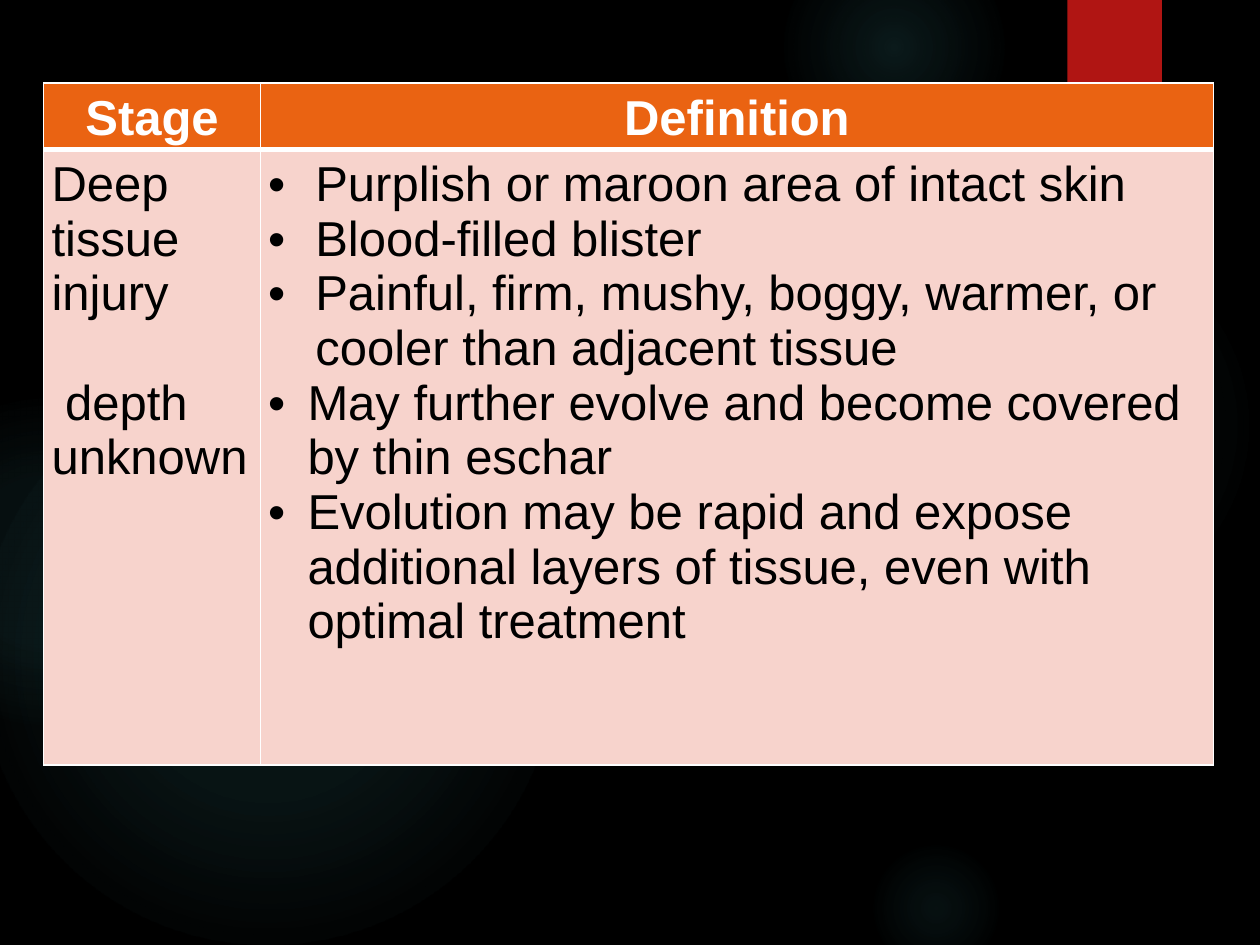
from dataclasses import dataclass

from lxml import etree
from pptx import Presentation
from pptx.dml.color import RGBColor
from pptx.enum.shapes import MSO_SHAPE
from pptx.enum.text import MSO_ANCHOR, PP_ALIGN
from pptx.oxml.ns import qn
from pptx.util import Pt

OVAL, RECT = MSO_SHAPE.OVAL, MSO_SHAPE.RECTANGLE
CENTER, LEFT = PP_ALIGN.CENTER, PP_ALIGN.LEFT
BOTTOM, TOP = MSO_ANCHOR.BOTTOM, MSO_ANCHOR.TOP


@dataclass(frozen=True)
class Theme:
    background: str = "000000"
    glow: str = "50B9C1"
    ribbon: str = "B01513"
    header: str = "EA6312"
    body: str = "F7D3CC"
    light: str = "FFFFFF"
    dark: str = "000000"
    font: str = "Arial"
    size: int = 28


THEME = Theme()

# left, top, diameter, then (position %, opacity %) stops
GLOWS = [
    (496, 132, 222, [(0, 7), (36, 6), (69, 0)]),
    (448, -36, 126, [(0, 14), (36, 7), (73, 0)]),
    (496, 480, 78, [(0, 9), (36, 5), (66, 0)]),
    (-12, 210, 330, [(0, 11), (36, 10), (75, 0)]),
    (-66, 228, 186, [(0, 8), (36, 8), (72, 0)]),
]
HEADINGS = ["Stage", "Definition"]
STAGE = ["Deep tissue injury", "depth unknown"]
# text, hanging indent
DEFINITION = [
    ("Purplish or maroon area of intact skin", 27),
    ("Blood-filled blister", 27),
    ("Painful, firm, mushy, boggy, warmer, or cooler than adjacent tissue", 27),
    ("May further evolve and become covered by thin eschar", 22.5),
    ("Evolution may be rapid and expose additional layers of tissue, "
     "even with optimal treatment", 22.5),
]


def rgb(color):
    return RGBColor.from_string(color)


def child(parent, tag, **attrs):
    el = etree.SubElement(parent, qn(tag))
    for name, value in attrs.items():
        el.set(name, str(value))
    return el


def add_color(parent, color, opacity=100):
    clr = child(parent, "a:srgbClr", val=color)
    if opacity < 100:
        child(clr, "a:alpha", val=opacity * 1000)


def add_plain_shape(slide, kind, box):
    sp = slide.shapes.add_shape(kind, *map(Pt, box))
    sp.shadow.inherit = False
    sp.line.fill.background()
    return sp


def add_glow(slide, box, stops):
    """Circle that fades from its centre to nothing."""
    sp = add_plain_shape(slide, OVAL, box)
    sp.fill.background()
    props = sp._element.spPr
    grad = etree.Element(qn("a:gradFill"))
    props.replace(props.find(qn("a:noFill")), grad)
    stop_list = child(grad, "a:gsLst")
    for position, opacity in stops:
        add_color(child(stop_list, "a:gs", pos=position * 1000), THEME.glow, opacity)
    path = child(grad, "a:path", path="circle")
    child(path, "a:fillToRect", l=50000, t=50000, r=50000, b=50000)


def add_ribbon(slide, box):
    sp = add_plain_shape(slide, RECT, box)
    sp.fill.solid()
    sp.fill.fore_color.rgb = rgb(THEME.ribbon)
    effects = sp._element.spPr.find(qn("a:effectLst"))
    shadow = child(effects, "a:outerShdw", blurRad=Pt(3), dist=Pt(2),
                   dir=90 * 60000, rotWithShape=0)
    add_color(shadow, "000000", 45)


def style_cell(cell, fill, anchor, top=1, bottom=1):
    cell.margin_left = cell.margin_right = cell.margin_top = Pt(4.5)
    cell.margin_bottom = Pt(2.25)
    cell.vertical_anchor = anchor
    props = cell._tc.get_or_add_tcPr()
    for side, width in (("L", 1), ("R", 1), ("T", top), ("B", bottom)):
        line = child(props, f"a:ln{side}", w=Pt(width))
        add_color(child(line, "a:solidFill"), THEME.light)
    cell.fill.solid()
    cell.fill.fore_color.rgb = rgb(fill)


def write_paragraphs(cell, texts, color, align=LEFT, bold=False):
    tf = cell.text_frame
    tf.text = "\n".join(texts)
    for p in tf.paragraphs:
        p.alignment = align
        p.font.name, p.font.size = THEME.font, Pt(THEME.size)
        p.font.bold, p.font.color.rgb = bold, rgb(color)
    return tf.paragraphs


def indent(p, left, first):
    props = p._p.get_or_add_pPr()
    props.set("marL", str(Pt(left)))
    props.set("indent", str(Pt(first)))
    return props


def add_bullet(p, hang):
    props = indent(p, hang, -hang)
    font = etree.Element(qn("a:buFont"), typeface=THEME.font)
    mark = etree.Element(qn("a:buChar"), char="•")
    # Bullet marks come before the default run properties
    position = props.index(props.find(qn("a:defRPr")))
    props.insert(position, font)
    props.insert(position + 1, mark)


def add_stage_table(slide, box, stage_width, header_height):
    left, top, width, height = box
    table = slide.shapes.add_table(2, 2, *map(Pt, box)).table
    table.columns[0].width = Pt(stage_width)
    table.columns[1].width = Pt(width - stage_width)
    table.rows[0].height = Pt(header_height)
    table.rows[1].height = Pt(height - header_height)

    for col, heading in enumerate(HEADINGS):
        style_cell(table.cell(0, col), THEME.header, BOTTOM, bottom=3)
        style_cell(table.cell(1, col), THEME.body, TOP, top=3)
        write_paragraphs(table.cell(0, col), [heading], THEME.light, CENTER, True)

    depth = write_paragraphs(table.cell(1, 0), STAGE, THEME.dark)[1]
    depth.space_before = Pt(31.2)
    indent(depth, 0, 7.8)

    texts = [text for text, _ in DEFINITION]
    paragraphs = write_paragraphs(table.cell(1, 1), texts, THEME.dark)
    for p, (_, hang) in zip(paragraphs, DEFINITION):
        add_bullet(p, hang)


def main():
    prs = Presentation()
    prs.slide_width, prs.slide_height = Pt(720), Pt(540)
    slide = prs.slides.add_slide(prs.slide_layouts[6])
    slide.background.fill.solid()
    slide.background.fill.fore_color.rgb = rgb(THEME.background)

    for left, top, size, stops in GLOWS:
        add_glow(slide, (left, top, size, size), stops)
    add_ribbon(slide, (610, 0, 54, 86.4))
    add_stage_table(slide, (25, 47.5, 668.5, 389.5), 123.75, 37.75)
    prs.save("out.pptx")


if __name__ == "__main__":
    main()
